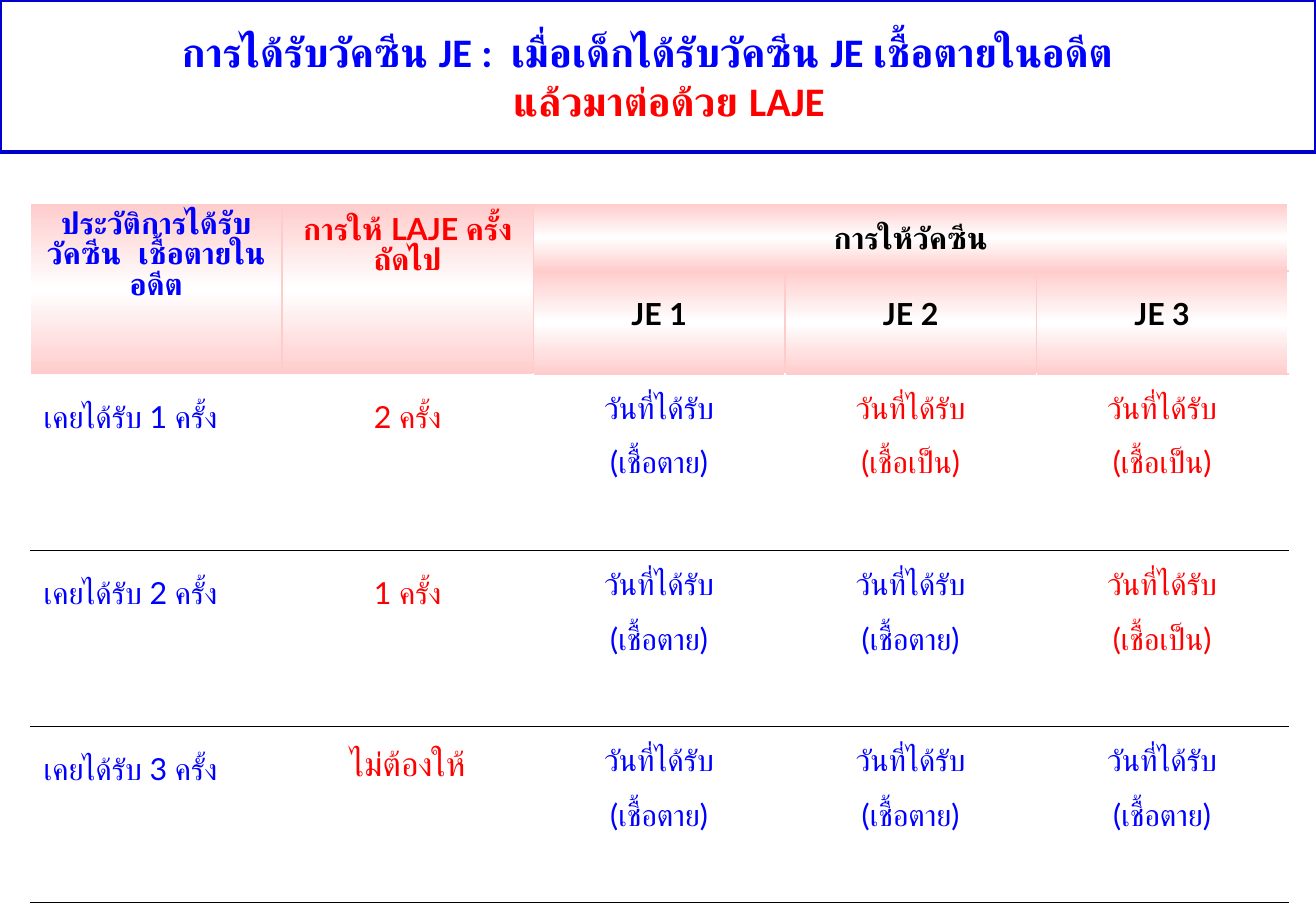
from dataclasses import dataclass

from lxml import etree
from pptx import Presentation
from pptx.dml.color import RGBColor
from pptx.enum.shapes import MSO_SHAPE
from pptx.enum.text import MSO_ANCHOR, PP_ALIGN
from pptx.oxml.ns import qn
from pptx.util import Inches, Pt

RECT = MSO_SHAPE.RECTANGLE
MIDDLE = MSO_ANCHOR.MIDDLE
LEFT, CENTER = PP_ALIGN.LEFT, PP_ALIGN.CENTER
NO_GRID_STYLE = "{2D5ABB26-0587-4C30-8999-92F81FD0307C}"


@dataclass(frozen=True)
class Theme:
    blue: str = "0000FF"
    red: str = "FF0000"
    black: str = "000000"
    white: str = "FFFFFF"
    pink: str = "FFCCCC"
    frame: str = "0000CC"
    title_font: str = "Calibri"
    table_font: str = "Lato"
    title_size: int = 24
    large_size: int = 20
    table_size: int = 18


THEME = Theme()


def add_text(p, text, *, font, size, color, bold=False, align=CENTER, spacing=None):
    p.alignment = align
    if spacing:
        p.line_spacing = spacing
    r = p.add_run()
    r.text = text
    r.font.name = font
    r.font.size = Pt(size)
    r.font.bold = bold
    r.font.color.rgb = RGBColor.from_string(color)


def sub(parent, tag, **attrs):
    return etree.SubElement(parent, qn(tag), attrs)


def add_solid(parent, color):
    sub(sub(parent, "a:solidFill"), "a:srgbClr", val=color)


def add_gradient(parent, stops):
    grad = sub(parent, "a:gradFill", rotWithShape="1")
    gs_list = sub(grad, "a:gsLst")
    for percent, color in stops:
        gs = sub(gs_list, "a:gs", pos=str(percent * 1000))
        sub(gs, "a:srgbClr", val=color)
    sub(grad, "a:lin", ang="5400000", scaled="0")


class SlideBuilder:
    def __init__(self, prs, theme):
        self.theme = theme
        self.s = prs.slides.add_slide(prs.slide_layouts[6])

    def title(self, lines, width, height):
        t = self.theme
        sp = self.s.shapes.add_shape(RECT, 0, 0, Inches(width), Inches(height))
        sp.shadow.inherit = False
        sp.fill.background()
        sp.line.color.rgb = RGBColor.from_string(t.frame)
        sp.line.width = Pt(2.25)
        tf = sp.text_frame
        tf.word_wrap = True
        tf.vertical_anchor = MIDDLE
        for i, (text, color, side, margin) in enumerate(lines):
            p = tf.add_paragraph() if i else tf.paragraphs[0]
            add_text(p, text, font=t.title_font, size=t.title_size, color=color, bold=True)
            p._p.get_or_add_pPr().set(side, str(Inches(margin)))

    def table(self, left, top, col_width, cols, row_heights):
        width, height = Inches(col_width * cols), Inches(sum(row_heights))
        frame = self.s.shapes.add_table(
            len(row_heights), cols, Inches(left), Inches(top), width, height)
        table = frame.table
        table.first_row = table.horz_banding = False
        table._tbl.tblPr.find(qn("a:tableStyleId")).text = NO_GRID_STYLE
        for row, row_height in zip(table.rows, row_heights):
            row.height = Inches(row_height)
        return table

    def cell(self, cell, lines, edges, header=False, **style):
        t = self.theme
        cell.margin_left = cell.margin_right = Inches(0.11)
        cell.margin_top = cell.margin_bottom = Inches(0.05)
        tf = cell.text_frame
        style = {"font": t.table_font, "size": t.table_size, "bold": header} | style
        for i, text in enumerate(lines):
            p = tf.add_paragraph() if i else tf.paragraphs[0]
            add_text(p, text, **style)
        tcPr = cell._tc.get_or_add_tcPr()
        for side in "LRTB":
            if side in edges:
                ln = sub(tcPr, f"a:ln{side}", w=str(Pt(1)))
                add_solid(ln, edges[side])
        if header:
            add_gradient(tcPr, [(0, t.pink), (50, t.white), (100, t.pink)])
        else:
            add_solid(tcPr, t.white)

    def header(self, table):
        t = self.theme
        side_edges = {"L": t.pink, "R": t.pink}
        for start, end in (((0, 0), (1, 0)), ((0, 1), (1, 1)), ((0, 2), (0, 4))):
            table.cell(*start).merge(table.cell(*end))
        self.cell(table.cell(0, 0), ["ประวัติการได้รับวัคซีน  เชื้อตายในอดีต"],
                  {"L": t.white, "R": t.pink}, header=True, color=t.blue)
        self.cell(table.cell(0, 1), ["การให้ LAJE ครั้งถัดไป"],
                  side_edges, header=True, color=t.red)
        self.cell(table.cell(0, 2), ["การให้วัคซีน"],
                  {"L": t.pink, "R": t.white, "B": t.pink},
                  header=True, color=t.black, spacing=1.5)
        for dose in (1, 2, 3):
            edges = side_edges | {"T": t.pink}
            if dose == 3:
                edges["R"] = t.white
            self.cell(table.cell(1, dose + 1), [f"JE {dose}"], edges,
                      header=True, color=t.black, spacing=1.5)

    def history_row(self, table, received, next_doses, next_size):
        t = self.theme
        row = received + 1
        edges = {"L": t.white, "R": t.white, "B": t.black}
        if received > 1:
            edges["T"] = t.black
        self.cell(table.cell(row, 0), [f"เคยได้รับ {received} ครั้ง"], edges,
                  color=t.blue, align=LEFT, spacing=1.5)
        self.cell(table.cell(row, 1), [next_doses], edges,
                  color=t.red, size=next_size, spacing=1.5)
        for dose in (1, 2, 3):
            killed = dose <= received
            kind = "(เชื้อตาย)" if killed else "(เชื้อเป็น)"
            self.cell(table.cell(row, dose + 1), ["วันที่ได้รับ", kind], edges,
                      color=t.blue if killed else t.red, spacing=1.5)


def main():
    prs = Presentation()
    prs.slide_width, prs.slide_height = Inches(10.83), Inches(7.5)
    slide = SlideBuilder(prs, THEME)
    slide.title([
        ("การได้รับวัคซีน JE :  เมื่อเด็กได้รับวัคซีน JE เชื้อตายในอดีต", THEME.blue, "marR", 0.18),
        ("แล้วมาต่อด้วย LAJE", THEME.red, "marL", 0.36),
    ], 10.83, 1.25)
    table = slide.table(0.25, 1.68, 2.07, 5, [0.55, 0.55, 1.45, 1.45, 1.45])
    slide.header(table)
    next_doses = [
        ("2 ครั้ง", THEME.table_size),
        ("1 ครั้ง", THEME.table_size),
        ("ไม่ต้องให้", THEME.large_size),
    ]
    for received, (text, size) in enumerate(next_doses, start=1):
        slide.history_row(table, received, text, size)
    prs.save("out.pptx")


if __name__ == "__main__":
    main()
